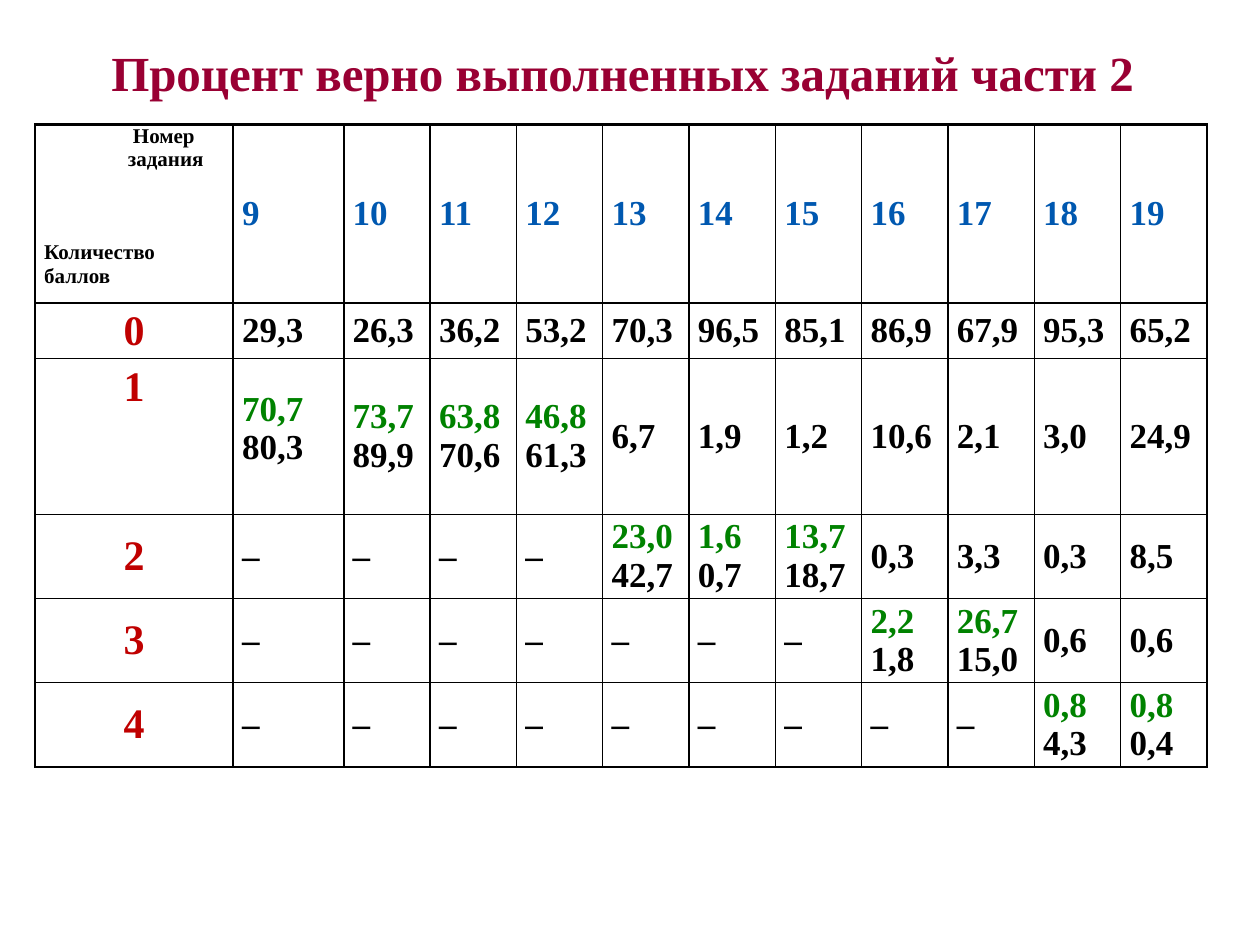
import pptx
import pptx.util
import pptx.dml.color
import pptx.enum.text
import pptx.oxml
import pptx.oxml.ns

Cm, Pt = pptx.util.Cm, pptx.util.Pt
RGBColor = pptx.dml.color.RGBColor
ALIGN = pptx.enum.text.PP_ALIGN
ANCHOR = pptx.enum.text.MSO_ANCHOR

CRIMSON = RGBColor(0x99, 0x00, 0x33)
BLUE = RGBColor(0x00, 0x58, 0xB0)
RED = RGBColor(0xC0, 0x00, 0x00)
GREEN = RGBColor(0x00, 0x82, 0x00)
BLACK = RGBColor(0x00, 0x00, 0x00)


def write_line(paragraph, text, size, color, align):
    paragraph.alignment = align
    run = paragraph.add_run()
    run.text = text
    font_format = {"name": "Times New Roman", "size": Pt(size), "bold": True}
    for attribute, value in font_format.items():
        setattr(run.font, attribute, value)
    run.font.color.rgb = color


def add_border(cell, side, width):
    cell._tc.get_or_add_tcPr().append(pptx.oxml.parse_xml(
        f'<a:ln{side} {pptx.oxml.ns.nsdecls("a")} w="{Pt(width)}">'
        f'<a:solidFill><a:srgbClr val="{BLACK}"/></a:solidFill></a:ln{side}>'))


presentation = pptx.Presentation()
presentation.slide_width, presentation.slide_height = Cm(25.4), Cm(19.05)
slide = presentation.slides.add_slide(presentation.slide_layouts[6])

# Title
title = slide.shapes.add_textbox(Cm(0), Cm(0.74), Cm(25.1), Cm(1.45)).text_frame
title.word_wrap = True
title.auto_size = pptx.enum.text.MSO_AUTO_SIZE.SHAPE_TO_FIT_TEXT
write_line(title.paragraphs[0], "Процент верно выполненных заданий части 2",
           28, CRIMSON, ALIGN.CENTER)

# Percentages by score and task; a slash parts the two values of a full score
tasks = [str(number) for number in range(9, 20)]
percentages = [
    "29,3 26,3 36,2 53,2 70,3 96,5 85,1 86,9 67,9 95,3 65,2".split(),
    "70,7/80,3 73,7/89,9 63,8/70,6 46,8/61,3 6,7 1,9 1,2 10,6 2,1 3,0 24,9".split(),
    ["–"] * 4 + "23,0/42,7 1,6/0,7 13,7/18,7 0,3 3,3 0,3 8,5".split(),
    ["–"] * 7 + "2,2/1,8 26,7/15,0 0,6 0,6".split(),
    ["–"] * 9 + "0,8/4,3 0,8/0,4".split(),
]
rows = [[""] + tasks] + [[str(score)] + row for score, row in enumerate(percentages)]
column_widths = [3.99, 2.23] + [1.74] * 10
row_heights = [3.6, 1.12, 3.14] + [1.69] * 3

# Table grid
results = slide.shapes.add_table(
    len(rows), len(column_widths), Cm(0.71), Cm(2.51),
    Cm(sum(column_widths)), Cm(sum(row_heights))).table
for flag in ("first_row", "horz_banding"):
    setattr(results, flag, False)
for column, width in zip(results.columns, column_widths):
    column.width = Cm(width)
for row, height in zip(results.rows, row_heights):
    row.height = Cm(height)

# Cell formats, borders and values
cell_format = {
    "margin_left": Cm(0.18), "margin_right": Cm(0.18),
    "margin_top": 0, "margin_bottom": 0, "vertical_anchor": ANCHOR.MIDDLE,
}
last_row, last_column = len(rows) - 1, len(column_widths) - 1
for r, row in enumerate(rows):
    for c, value in enumerate(row):
        cell = results.cell(r, c)
        for attribute, setting in cell_format.items():
            setattr(cell, attribute, setting)
        outer_sides = {"L": c == 0, "R": c == last_column,
                       "T": r <= 1, "B": r in (0, last_row)}
        for side, heavy in outer_sides.items():
            add_border(cell, side, 1.5 if heavy else 1)
        cell.fill.background()

        if r == c == 0:
            continue
        lines = value.split("/")
        for i, line in enumerate(lines):
            frame = cell.text_frame
            paragraph = frame.paragraphs[0] if i == 0 else frame.add_paragraph()
            if c == 0:
                write_line(paragraph, line, 24, RED, ALIGN.CENTER)
            else:
                color = BLUE if r == 0 else GREEN if i < len(lines) - 1 else BLACK
                write_line(paragraph, line, 20, color, ALIGN.JUSTIFY)

# Score 1 sits at the top of its row, and its first result a little high
score_one = results.cell(2, 0)
score_one.vertical_anchor = ANCHOR.TOP
score_one.margin_top = Cm(0.1)
results.cell(2, 1).margin_bottom = Cm(0.32)

# Corner cell: axis captions as (text, indent in cm, space before in pt)
corner = results.cell(0, 0)
corner.vertical_anchor = ANCHOR.TOP
captions = [("Номер", 1.79, 0), ("задания", 1.69, 0),
            ("Количество", 0, 40), ("баллов", 0, 0)]
for i, (caption, indent, space) in enumerate(captions):
    frame = corner.text_frame
    paragraph = frame.paragraphs[0] if i == 0 else frame.add_paragraph()
    write_line(paragraph, caption, 12, BLACK, ALIGN.JUSTIFY)
    paragraph.space_before = Pt(space)
    paragraph._p.get_or_add_pPr().set("marL", str(Cm(indent)))

presentation.save("out.pptx")
